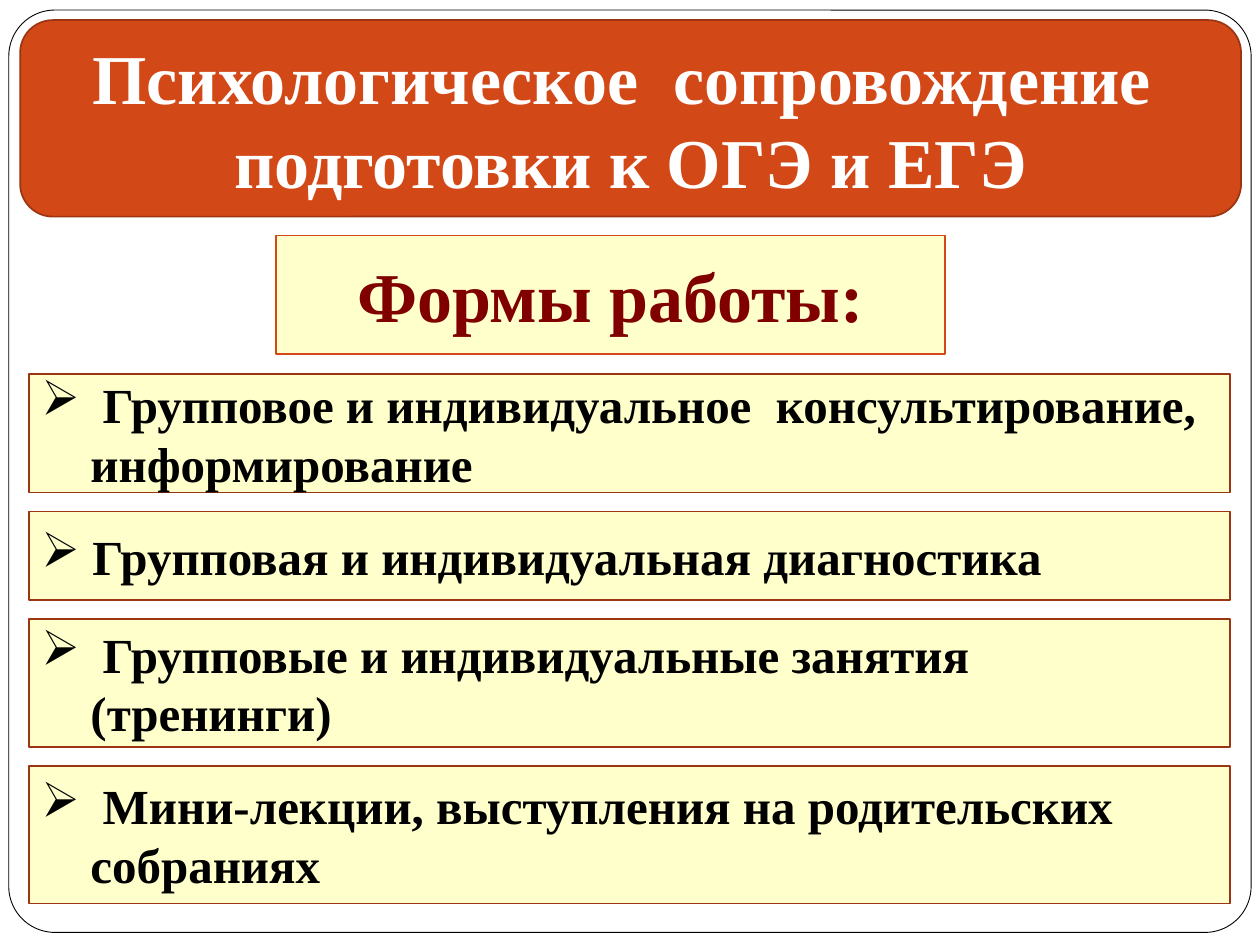
from lxml.etree import SubElement
from pptx import Presentation
from pptx.dml.color import RGBColor
from pptx.enum.shapes import MSO_SHAPE
from pptx.enum.text import MSO_ANCHOR, PP_ALIGN
from pptx.oxml.ns import qn
from pptx.util import Inches, Pt

WHITE = RGBColor(0xFF, 0xFF, 0xFF)
BLACK = RGBColor(0x00, 0x00, 0x00)
ORANGE = RGBColor(0xD3, 0x48, 0x17)
RUST = RGBColor(0x9C, 0x35, 0x11)
CREAM = RGBColor(0xFF, 0xFF, 0xCC)
MAROON = RGBColor(0x80, 0x00, 0x00)

FORMS_OF_WORK = [
    (" Групповое и индивидуальное  консультирование, информирование", 0.94, 0.39),
    (" Групповая и индивидуальная диагностика", 0.7, 0),
    (" Групповые и индивидуальные занятия (тренинги)", 1.02, 0.39),
    (" Мини-лекции, выступления на родительских собраниях", 1.09, 0.39),
]
FIRST_TOP = 2.97
GAP = 0.15


class SlideBuilder:
    font_name = "Times New Roman"
    heading_size = Pt(40)
    item_size = Pt(28)

    def __init__(self, presentation):
        self.slide = presentation.slides.add_slide(presentation.slide_layouts[6])

    def box(self, bounds, fill, line, width=1, kind=MSO_SHAPE.RECTANGLE):
        shape = self.slide.shapes.add_shape(kind, *map(Inches, bounds))
        shape.shadow.inherit = False
        shape.fill.solid()
        shape.fill.fore_color.rgb = fill
        shape.line.color.rgb = line
        shape.line.width = Pt(width)
        return shape

    def frame(self, bounds):
        shape = self.box(bounds, WHITE, BLACK, 0.5, MSO_SHAPE.ROUNDED_RECTANGLE)
        shape.adjustments[0] = 0.05

    def label(self, shape, text, size, color, alignment):
        shape.text_frame.word_wrap = True
        shape.text_frame.vertical_anchor = MSO_ANCHOR.MIDDLE
        paragraph = shape.text_frame.paragraphs[0]
        paragraph.text = text
        paragraph.alignment = alignment
        paragraph.font.name = self.font_name
        paragraph.font.size = size
        paragraph.font.bold = True
        paragraph.font.color.rgb = color
        return paragraph

    def heading(self, text, bounds, fill, line, color, kind=MSO_SHAPE.RECTANGLE):
        shape = self.box(bounds, fill, line, kind=kind)
        self.label(shape, text, self.heading_size, color, PP_ALIGN.CENTER)

    def item(self, text, bounds, indent):
        shape = self.box(bounds, CREAM, RUST)
        paragraph = self.label(shape, text, self.item_size, BLACK, PP_ALIGN.LEFT)
        properties = paragraph._p.get_or_add_pPr()
        properties.set("marL", str(Inches(indent)))
        properties.set("indent", str(-Inches(indent)))
        bullet = SubElement(properties, qn("a:buChar"), char="➢")
        properties.find(qn("a:defRPr")).addprevious(bullet)


def main():
    presentation = Presentation()
    presentation.slide_width = Inches(10)
    presentation.slide_height = Inches(7.5)
    builder = SlideBuilder(presentation)

    builder.frame((0.07, 0.08, 9.86, 7.32))
    builder.heading("Психологическое  сопровождение  подготовки к ОГЭ и ЕГЭ",
                    (0.16, 0.16, 9.69, 1.56), ORANGE, RUST, WHITE,
                    MSO_SHAPE.ROUNDED_RECTANGLE)
    builder.heading("Формы работы:", (2.19, 1.87, 5.31, 0.94), CREAM, ORANGE, MAROON)

    top = FIRST_TOP
    for text, height, indent in FORMS_OF_WORK:
        builder.item(text, (0.23, top, 9.53, height), indent)
        top += height + GAP

    presentation.save("out.pptx")


if __name__ == "__main__":
    main()
